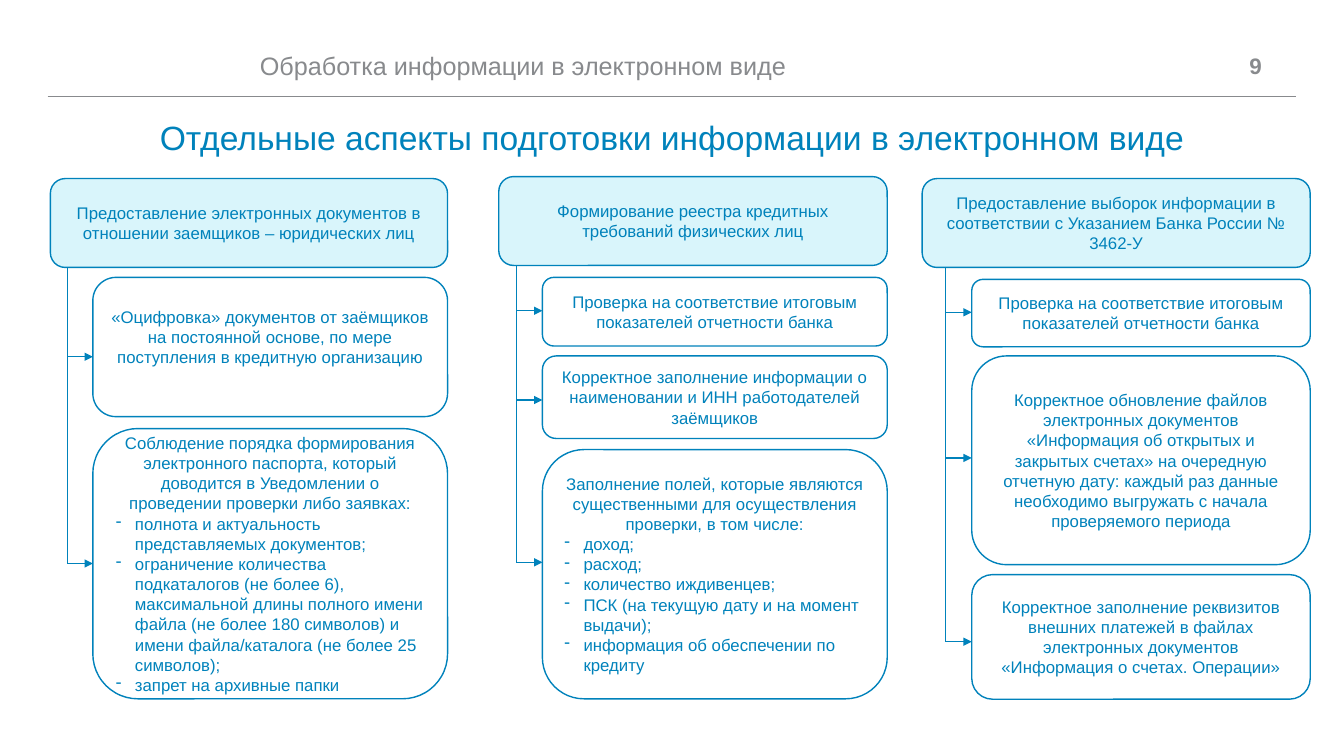
from lxml.etree import SubElement
from pptx import Presentation
from pptx.dml.color import RGBColor
from pptx.enum.shapes import MSO_CONNECTOR, MSO_SHAPE
from pptx.enum.text import MSO_ANCHOR, MSO_AUTO_SIZE, PP_ALIGN
from pptx.oxml.ns import qn
from pptx.util import Cm, Pt

BLUE = RGBColor(0x00, 0x82, 0xBB)
GREY = RGBColor(0x88, 0x8A, 0x8D)
PALE_BLUE = RGBColor(0xD9, 0xF5, 0xFB)
WHITE = RGBColor(0xFF, 0xFF, 0xFF)

# Content; lengths in centimetres
SECTION = "Обработка информации в электронном виде"
PAGE_NUMBER = "9"
TITLE = "Отдельные аспекты подготовки информации в электронном виде"
TOTALS_CHECK = "Проверка на соответствие итоговым показателей отчетности банка"

COLUMNS = [
    {
        "header": "Предоставление электронных документов в отношении заемщиков – юридических лиц",
        "left": 1.27, "top": 4.5, "right": 11.28, "trunk": 1.7, "box_left": 2.34,
        "boxes": [
            {"top": 6.99, "height": 3.51, "arrow": 8.99, "bottom_inset": 0.64,
             "text": "«Оцифровка» документов от заёмщиков на постоянной основе, "
                     "по мере поступления в кредитную организацию"},
            {"top": 10.8, "height": 6.81, "arrow": 14.2,
             "text": "Соблюдение порядка формирования электронного паспорта, который "
                     "доводится в Уведомлении о проведении проверки либо заявках:",
             "bullets": [
                 "полнота и актуальность представляемых документов;",
                 "ограничение количества подкаталогов (не более 6), максимальной длины "
                 "полного имени файла (не более 180 символов) и имени файла/каталога "
                 "(не более 25 символов);",
                 "запрет на архивные папки",
             ]},
        ],
    },
    {
        "header": "Формирование реестра кредитных требований физических лиц",
        "left": 12.57, "top": 4.45, "right": 22.36, "trunk": 13.01, "box_left": 13.67,
        "boxes": [
            {"top": 6.99, "height": 1.73, "arrow": 7.83, "text": TOTALS_CHECK},
            {"top": 8.97, "height": 2.08, "arrow": 10.08,
             "text": "Корректное заполнение информации о наименовании и ИНН "
                     "работодателей заёмщиков"},
            {"top": 11.33, "height": 6.28, "arrow": 14.17,
             "text": "Заполнение полей, которые являются существенными для "
                     "осуществления проверки, в том числе:",
             "bullets": [
                 "доход;",
                 "расход;",
                 "количество иждивенцев;",
                 "ПСК (на текущую дату и на момент выдачи);",
                 "информация об обеспечении по кредиту",
             ]},
        ],
    },
    {
        "header": "Предоставление выборок информации в соответствии с Указанием "
                  "Банка России № 3462-У",
        "left": 23.24, "top": 4.5, "right": 33.02, "trunk": 23.83, "box_left": 24.49,
        "boxes": [
            {"top": 7.04, "height": 1.7, "arrow": 7.87, "text": TOTALS_CHECK},
            {"top": 8.97, "height": 5.26, "arrow": 11.54,
             "text": "Корректное обновление файлов электронных документов «Информация "
                     "об открытых и закрытых счетах» на очередную отчетную дату: каждый "
                     "раз данные необходимо выгружать с начала проверяемого периода"},
            {"top": 14.48, "height": 3.14, "arrow": 16.17,
             "text": "Корректное заполнение реквизитов внешних платежей в файлах "
                     "электронных документов «Информация о счетах. Операции»"},
        ],
    },
]
HEADER_HEIGHT = 2.24
BULLET_INDENT = 0.48


def write_text(shape, text, bullets=(), size=12, color=BLUE, bold=False,
               align=PP_ALIGN.CENTER, anchor=MSO_ANCHOR.MIDDLE,
               line_spacing=None, inset=None):
    frame = shape.text_frame
    frame.word_wrap = True
    frame.auto_size = MSO_AUTO_SIZE.NONE
    frame.vertical_anchor = anchor
    if inset is not None:
        frame.margin_left = frame.margin_right = Cm(inset)
        frame.margin_top = frame.margin_bottom = Cm(inset)
    for index, line in enumerate([text, *bullets]):
        paragraph = frame.add_paragraph() if index else frame.paragraphs[0]
        paragraph.alignment = PP_ALIGN.LEFT if index else align
        if line_spacing:
            paragraph.line_spacing = line_spacing
        if index:
            properties = paragraph._p.get_or_add_pPr()
            properties.set("marL", str(Cm(BULLET_INDENT)))
            properties.set("indent", str(-Cm(BULLET_INDENT)))
            SubElement(properties, qn("a:buChar")).set("char", "-")
        run = paragraph.add_run()
        run.text = line
        run.font.name = "Arial"
        run.font.size = Pt(size)
        run.font.bold = bold
        run.font.color.rgb = color


def add_label(left, top, width, height, text, **text_format):
    label = slide.shapes.add_textbox(Cm(left), Cm(top), Cm(width), Cm(height))
    write_text(label, text, inset=0, **text_format)


def add_box(left, top, right, height, fill, text, bullets=()):
    box = slide.shapes.add_shape(MSO_SHAPE.ROUNDED_RECTANGLE, Cm(left), Cm(top),
                                 Cm(right - left), Cm(height))
    box.shadow.inherit = False
    box.fill.solid()
    box.fill.fore_color.rgb = fill
    box.line.color.rgb = BLUE
    box.line.width = Pt(1)
    write_text(box, text, bullets)
    return box


def add_line(x1, y1, x2, y2, color=BLUE, width=1, arrow=False):
    line = slide.shapes.add_connector(MSO_CONNECTOR.STRAIGHT,
                                      Cm(x1), Cm(y1), Cm(x2), Cm(y2))
    line.line.color.rgb = color
    line.line.width = Pt(width)
    if arrow:
        SubElement(line.line._get_or_add_ln(), qn("a:tailEnd")).set("type", "triangle")
    SubElement(line._element.spPr, qn("a:effectLst"))


presentation = Presentation()
presentation.slide_width = Cm(33.87)
presentation.slide_height = Cm(19.05)
slide = presentation.slides.add_slide(presentation.slide_layouts[5])

# Top strip and title
add_line(1.2, 2.42, 32.67, 2.42, color=GREY, width=0.5)
add_label(6.55, 1.2, 23.44, 0.88, SECTION, size=18, color=GREY, align=PP_ALIGN.LEFT)
add_label(30.61, 1.2, 2.06, 0.88, PAGE_NUMBER, size=16, color=GREY, bold=True)
title = slide.shapes.title
title.left, title.top, title.width, title.height = Cm(1.2), Cm(3.07), Cm(31.47), Cm(1.2)
write_text(title, TITLE, size=24, anchor=MSO_ANCHOR.TOP, line_spacing=0.9, inset=0)

# Columns: header, boxes, and a trunk with an arrow to each box
for column in COLUMNS:
    add_box(column["left"], column["top"], column["right"], HEADER_HEIGHT,
            PALE_BLUE, column["header"])
    for item in column["boxes"]:
        box = add_box(column["box_left"], item["top"], column["right"], item["height"],
                      WHITE, item["text"], item.get("bullets", ()))
        if "bottom_inset" in item:
            box.text_frame.margin_bottom = Cm(item["bottom_inset"])
        add_line(column["trunk"], item["arrow"], column["box_left"], item["arrow"],
                 arrow=True)
    add_line(column["trunk"], column["top"] + HEADER_HEIGHT,
             column["trunk"], column["boxes"][-1]["arrow"])

presentation.save("out.pptx")
